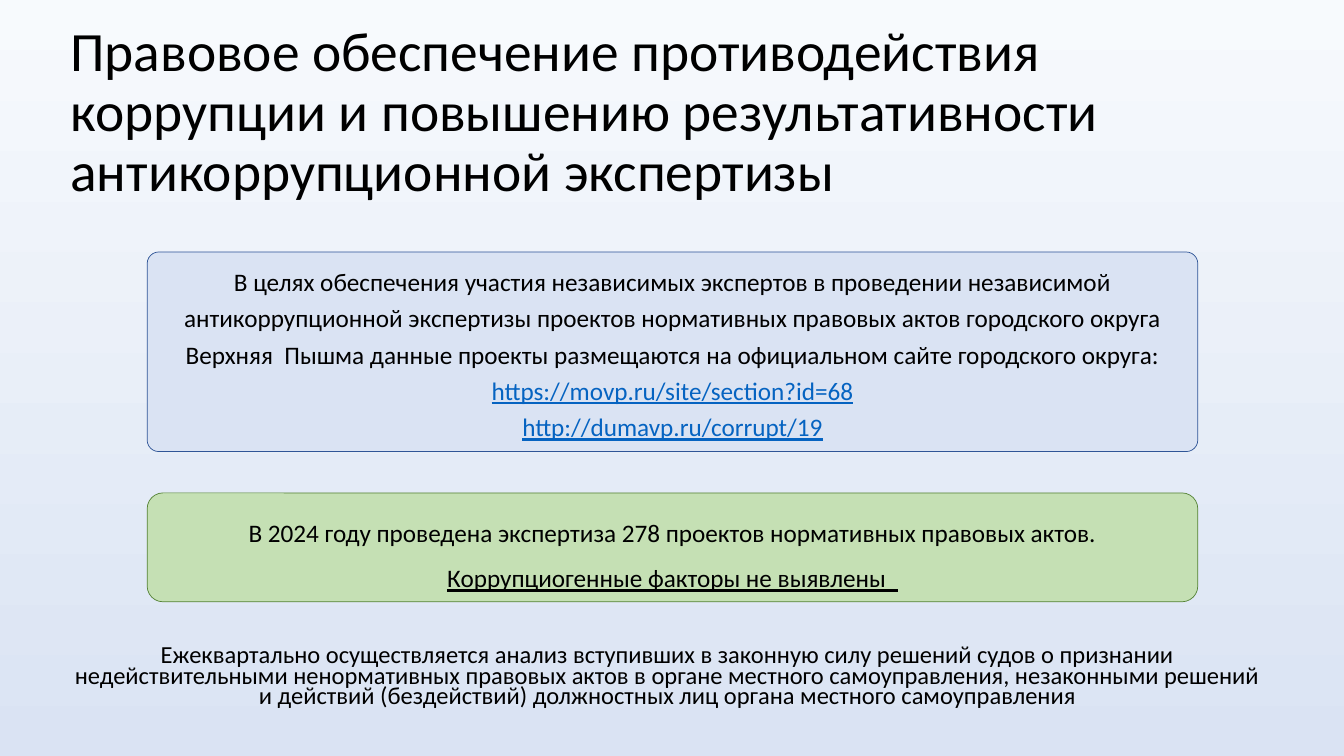
from dataclasses import dataclass

import pptx
import pptx.dml.color
import pptx.enum.shapes
import pptx.enum.text
import pptx.util

Inches = pptx.util.Inches
Pt = pptx.util.Pt
Align = pptx.enum.text.PP_ALIGN
Anchor = pptx.enum.text.MSO_ANCHOR

BLACK = "000000"
LINK = "0563C1"


@dataclass
class Run:
    text: str
    color: str = BLACK
    under: bool = False


@dataclass
class Block:
    left: float
    top: float
    width: float
    height: float
    paras: list[list[Run]]
    size: float
    space: float
    anchor: Anchor = Anchor.TOP
    align: Align = Align.CENTER
    before: float = 0
    fill: str = ""
    line: str = ""
    round: float = 0


BLOCKS = [
    Block(0.6, 0.4, 12.05, 1.45, [[Run(
        "Правовое обеспечение противодействия коррупции и повышению "
        "результативности антикоррупционной экспертизы")]],
        39.6, 0.9, Anchor.MIDDLE, Align.LEFT),
    Block(1.46, 2.5, 10.42, 1.98, [
        [Run("В целях обеспечения участия независимых экспертов в проведении "
             "независимой антикоррупционной экспертизы проектов нормативных "
             "правовых актов городского округа Верхняя  Пышма данные проекты "
             "размещаются на официальном сайте городского округа:")],
        [Run("https://movp.ru/site/section?id=68", LINK, True)],
        [Run("http://dumavp.ru/corrupt/19", LINK, True)]],
        18, 1.2, fill="DAE3F3", line="2F5597", round=0.058),
    Block(1.46, 4.89, 10.42, 1.08, [[
        Run("В 2024 году проведена экспертиза 278 проектов нормативных "
            "правовых актов. "),
        Run("Коррупциогенные факторы не выявлены  ", under=True)]],
        18, 1.5, Anchor.MIDDLE, fill="C5E0B4", line="548235", round=0.145),
    Block(0.6, 6.37, 12.05, 0.93, [[Run(
        "Ежеквартально осуществляется анализ вступивших в законную силу "
        "решений судов о признании недействительными ненормативных правовых "
        "актов в органе местного самоуправления, незаконными решений и "
        "действий (бездействий) должностных лиц органа местного "
        "самоуправления")]],
        17.5, 0.7, before=10),
]


def paint(target, color: str) -> None:
    target.rgb = pptx.dml.color.RGBColor.from_string(color)


def write(frame, block: Block) -> None:
    frame.word_wrap = True
    frame.vertical_anchor = block.anchor
    for index, runs in enumerate(block.paras):
        para = frame.add_paragraph() if index else frame.paragraphs[0]
        para.alignment = block.align
        para.line_spacing = block.space
        para.space_before = Pt(block.before)
        for item in runs:
            run = para.add_run()
            run.text = item.text
            run.font.name = "Calibri"
            run.font.size = Pt(block.size)
            run.font.underline = item.under
            paint(run.font.color, item.color)


def draw(slide, block: Block) -> None:
    area = [Inches(v) for v in
            (block.left, block.top, block.width, block.height)]
    if block.fill:
        kind = pptx.enum.shapes.MSO_SHAPE.ROUNDED_RECTANGLE
        shape = slide.shapes.add_shape(kind, *area)
        shape.adjustments[0] = block.round
        shape.shadow.inherit = False
        shape.fill.solid()
        paint(shape.fill.fore_color, block.fill)
        paint(shape.line.color, block.line)
        shape.line.width = Pt(0.5)
    else:
        shape = slide.shapes.add_textbox(*area)
    write(shape.text_frame, block)


def main() -> None:
    deck = pptx.Presentation()
    deck.slide_width = Inches(13.33)
    deck.slide_height = Inches(7.5)
    slide = deck.slides.add_slide(deck.slide_layouts[6])
    back = slide.background.fill
    back.gradient()
    back.gradient_angle = 270
    for stop, color in zip(back.gradient_stops, ("F7FAFD", "DAE3F3")):
        paint(stop.color, color)
    for block in BLOCKS:
        draw(slide, block)
    deck.save("out.pptx")


if __name__ == "__main__":
    main()
